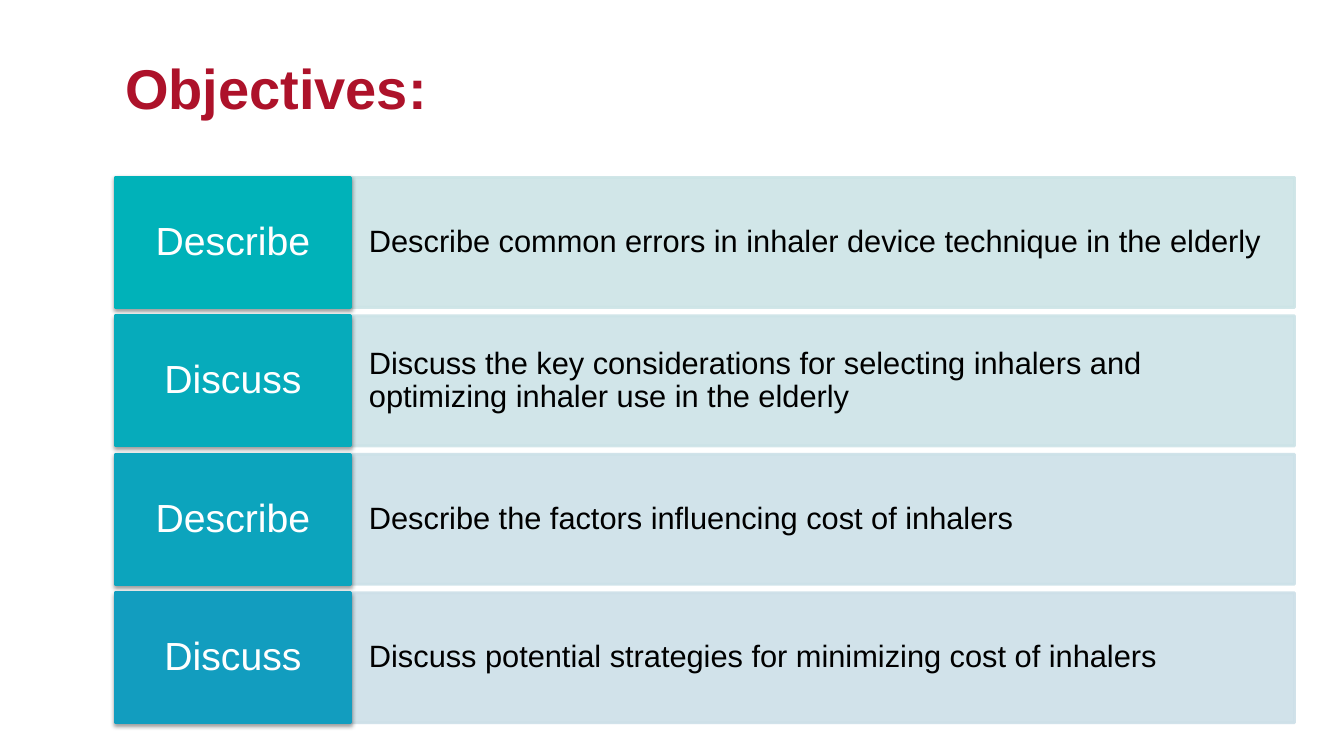
from lxml import etree
from pptx import Presentation, util as u
from pptx.dml.color import RGBColor
from pptx.enum import shapes, text
from pptx.oxml import ns

TITLE = "Objectives:"
OBJECTIVES = [
    ("Describe", "Describe common errors in inhaler device technique in the elderly", "00B2B9", "CCE4E6"),
    ("Discuss", "Discuss the key considerations for selecting inhalers and "
     "optimizing inhaler use in the elderly", "06ABBB", "CCE3E7"),
    ("Describe", "Describe the factors influencing cost of inhalers", "0CA4BD", "CCE1E8"),
    ("Discuss", "Discuss potential strategies for minimizing cost of inhalers", "129DBF", "CDDFE8"),
]
COLORS = {"title": "AD122A", "verb": "FFFFFF", "detail": "000000", "shadow": "000000"}
FONT = "Arial"
LEFT, TOP, LAST_TOP = 1.14, 1.76, 5.88
VERB_W, DETAIL_W, ROW_H = 2.34, 9.36, 1.29
PITCH = (LAST_TOP - TOP) / (len(OBJECTIVES) - 1)


def write(sp, content, size, color, bold=False, align=text.PP_ALIGN.LEFT, insets=(0.1, 0)):
    tf = sp.text_frame
    tf.word_wrap = True
    tf.auto_size = text.MSO_AUTO_SIZE.NONE
    tf.vertical_anchor = text.MSO_ANCHOR.MIDDLE
    tf.margin_left = tf.margin_right = u.Inches(insets[0])
    tf.margin_top = tf.margin_bottom = u.Inches(insets[1])
    p = tf.paragraphs[0]
    p.alignment = align
    p.line_spacing = 0.9
    p.space_before = u.Pt(0)
    r = p.add_run()
    r.text = content
    r.font.name = FONT
    r.font.size = u.Pt(size)
    r.font.bold = bold
    r.font.color.rgb = RGBColor.from_string(color)


def add_box(s, left, top, width, color):
    sp = s.shapes.add_shape(shapes.MSO_SHAPE.RECTANGLE, u.Inches(left), u.Inches(top),
                            u.Inches(width), u.Inches(ROW_H))
    sp.shadow.inherit = False
    sp.fill.solid()
    sp.fill.fore_color.rgb = RGBColor.from_string(color)
    sp.line.color.rgb = RGBColor.from_string(color)
    sp.line.width = u.Pt(2)
    return sp


def set_alpha(clr, percent):
    etree.SubElement(clr, ns.qn("a:alpha"), val=str(percent * 1000))


def add_shadow(sp):
    effects = sp._element.spPr.find(ns.qn("a:effectLst"))
    shadow = etree.SubElement(effects, ns.qn("a:outerShdw"), blurRad=str(u.Pt(3.1)),
                              dist=str(u.Pt(1.6)), dir="5400000", rotWithShape="0")
    set_alpha(etree.SubElement(shadow, ns.qn("a:srgbClr"), val=COLORS["shadow"]), 38)


def main():
    prs = Presentation()
    prs.slide_width, prs.slide_height = u.Inches(13.33), u.Inches(7.5)
    s = prs.slides.add_slide(prs.slide_layouts[5])

    title = s.shapes.title
    title.left, title.top = u.Inches(LEFT), u.Inches(0.24)
    title.width, title.height = u.Inches(11.69), u.Inches(1.34)
    write(title, TITLE, 40, COLORS["title"], bold=True)

    for i, (verb, detail, verb_fill, detail_fill) in enumerate(OBJECTIVES):
        top = TOP + i * PITCH
        sp = add_box(s, LEFT + VERB_W, top, DETAIL_W, detail_fill)
        for clr in sp._element.spPr.iter(ns.qn("a:srgbClr")):
            set_alpha(clr, 90)
        write(sp, detail, 22, COLORS["detail"], insets=(0.18, 0.33))

        sp = add_box(s, LEFT, top, VERB_W, verb_fill)
        add_shadow(sp)
        write(sp, verb, 28, COLORS["verb"], align=text.PP_ALIGN.CENTER, insets=(0.12, 0.13))

    prs.save("out.pptx")


if __name__ == "__main__":
    main()
